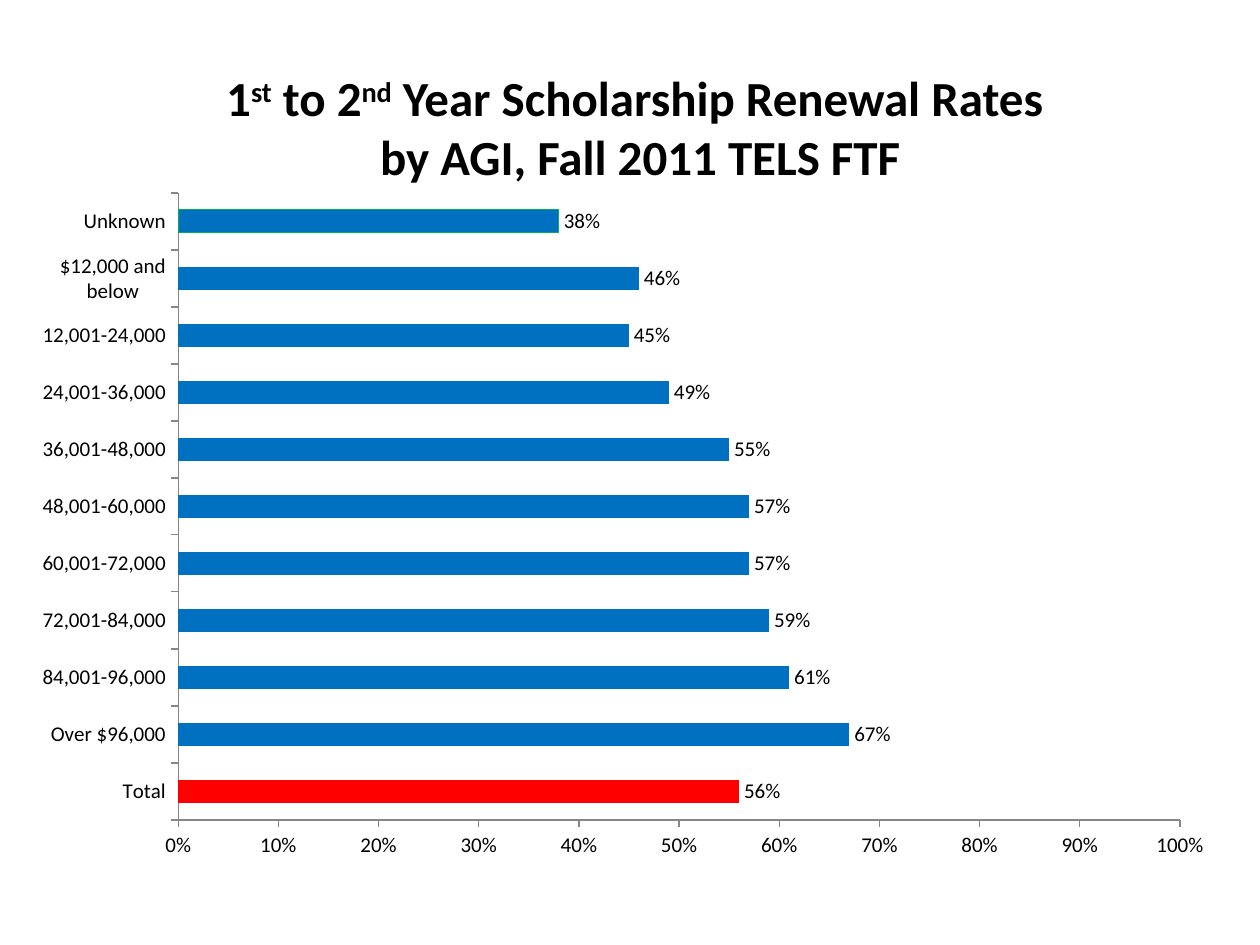
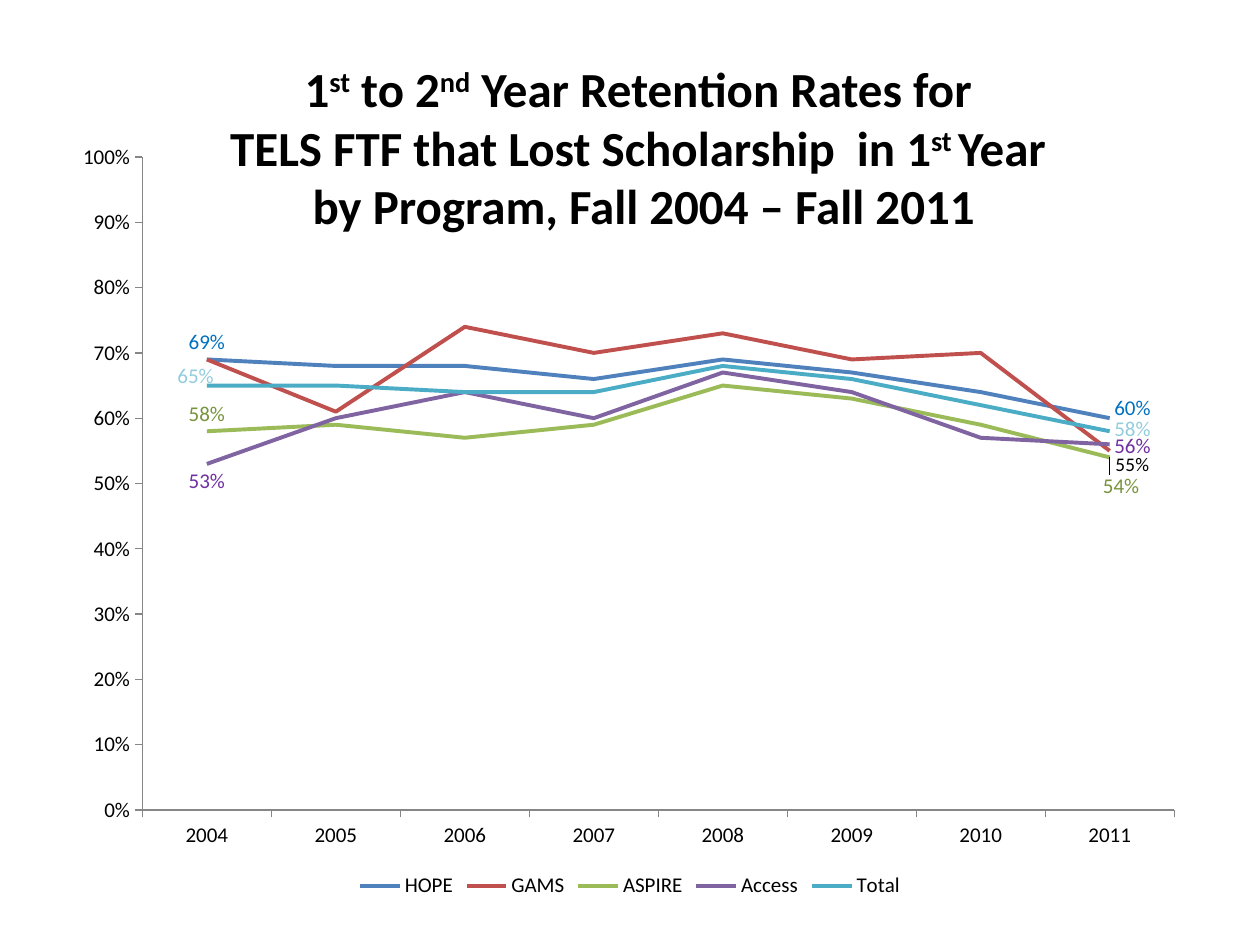
"""Build two slides on scholarship renewal and retention rates."""
from lxml.etree import SubElement
from pptx import Presentation
from pptx.chart.data import CategoryChartData
from pptx.dml.color import RGBColor
from pptx.enum.chart import XL_CHART_TYPE, XL_LABEL_POSITION, XL_LEGEND_POSITION, XL_TICK_MARK
from pptx.enum.text import MSO_ANCHOR, PP_ALIGN
from pptx.oxml.ns import qn
from pptx.util import Cm, Pt

FONT = "Calibri"
COLORS = {
    "text": "000000", "axis": "868686", "bar": "0070C0", "total": "FF0000", "outline": "00B050",
    "HOPE": "4F81BD", "GAMS": "C0504D", "ASPIRE": "9BBB59", "Access": "8064A2", "Total": "4BACC6",
    "HOPE label": "0070C0", "GAMS label": "000000", "ASPIRE label": "77933C",
    "Access label": "7030A0", "Total label": "93CDDD",
}
ABOVE, BELOW = XL_LABEL_POSITION.ABOVE, XL_LABEL_POSITION.BELOW

# Every second part between bars is superscript.
RENEWAL_TITLE = ["1|st| to 2|nd| Year Scholarship Renewal Rates ", "by AGI, Fall 2011 TELS FTF"]
RETENTION_TITLE = [
    "1|st| to 2|nd| Year Retention Rates for ",
    "TELS FTF that Lost Scholarship  in 1|st |Year ",
    "by Program, Fall 2004 – Fall 2011",
]
RENEWAL_RATES = {
    "Total": 0.56, "Over $96,000": 0.67, "84,001-96,000": 0.61, "72,001-84,000": 0.59,
    "60,001-72,000": 0.57, "48,001-60,000": 0.57, "36,001-48,000": 0.55, "24,001-36,000": 0.49,
    "12,001-24,000": 0.45, "$12,000 and below": 0.46, "Unknown": 0.38,
}
YEARS = [str(year) for year in range(2004, 2012)]
RETENTION_RATES = {
    "HOPE": [0.69, 0.68, 0.68, 0.66, 0.69, 0.67, 0.64, 0.60],
    "GAMS": [0.69, 0.61, 0.74, 0.70, 0.73, 0.69, 0.70, 0.55],
    "ASPIRE": [0.58, 0.59, 0.57, 0.59, 0.65, 0.63, 0.59, 0.54],
    "Access": [0.53, 0.60, 0.64, 0.60, 0.67, 0.64, 0.57, 0.56],
    "Total": [0.65, 0.65, 0.64, 0.64, 0.68, 0.66, 0.62, 0.58],
}
LABELS = {
    "HOPE": (ABOVE, 12, {0: (0, 0), 7: (0.02, 0.01)}),
    "GAMS": (ABOVE, 11, {7: (0.02, 0.04)}),
    "ASPIRE": (ABOVE, 12, {0: (0, 0), 7: (0.01, 0.06)}),
    "Access": (BELOW, 12, {0: (0, 0), 7: (0.02, -0.02)}),
    "Total": (ABOVE, 12, {0: (-0.01, 0.01), 7: (0.02, 0.02)}),
}


def color(name):
    return RGBColor.from_string(COLORS[name])


def style_font(font, size, color_name="text", bold=False):
    font.name, font.size, font.bold = FONT, Pt(size), bold
    font.color.rgb = color(color_name)


def add_title(slide, left, top, lines):
    frame = slide.shapes.add_textbox(Cm(left), Cm(top), Cm(21.59), Cm(2.97)).text_frame
    frame.word_wrap = True
    frame.vertical_anchor = MSO_ANCHOR.MIDDLE
    for number, line in enumerate(lines):
        paragraph = frame.add_paragraph() if number else frame.paragraphs[0]
        paragraph.alignment = PP_ALIGN.CENTER
        for position, text in enumerate(line.split("|")):
            run = paragraph.add_run()
            run.text = text
            style_font(run.font, 28, bold=True)
            if position % 2:
                run.font._element.set("baseline", "30000")


def add_layout(parent, index, **values):
    layout = SubElement(parent, qn("c:layout"))
    parent.insert(index, layout)
    manual = SubElement(layout, qn("c:manualLayout"))
    for tag, value in values.items():
        SubElement(manual, qn(f"c:{tag}")).set("val", str(value))


def add_rate_chart(slide, kind, box, plot_box, categories, series_values):
    data = CategoryChartData(number_format="0%")
    data.categories = categories
    for name, values in series_values.items():
        data.add_series(name, values)
    chart = slide.shapes.add_chart(kind, *map(Cm, box), data).chart
    style_font(chart.font, 10)
    chart.has_title = False
    chart.has_legend = False
    for axis in (chart.category_axis, chart.value_axis):
        axis.has_major_gridlines = False
        axis.major_tick_mark = XL_TICK_MARK.OUTSIDE
        axis.minor_tick_mark = XL_TICK_MARK.NONE
        axis.format.line.color.rgb = color("axis")
        style_font(axis.tick_labels.font, 12)
    axis = chart.value_axis
    axis.minimum_scale, axis.maximum_scale, axis.major_unit = 0, 1, 0.1
    axis.tick_labels.number_format = "0%"
    axis.tick_labels.number_format_is_linked = False
    plot_area = chart._chartSpace.chart.plotArea
    for layout in plot_area.findall(qn("c:layout")):
        plot_area.remove(layout)
    x, y, w, h = plot_box
    add_layout(plot_area, 0, layoutTarget="inner", xMode="edge", yMode="edge", x=x, y=y, w=w, h=h)
    chart.plots[0].vary_by_categories = False
    return chart


def build_renewal_slide(slide):
    chart = add_rate_chart(slide, XL_CHART_TYPE.BAR_CLUSTERED, (0.43, 3.61, 24.33, 13.97),
                           (0.13, 0.02, 0.83, 0.905), list(RENEWAL_RATES),
                           {"Series 1": list(RENEWAL_RATES.values())})
    chart.plots[0].gap_width = 150
    series = chart.plots[0].series[0]
    for target, name in ((series, "bar"), (series.points[0], "total"), (series.points[10], "bar")):
        target.format.fill.solid()
        target.format.fill.fore_color.rgb = color(name)
    series.points[10].format.line.color.rgb = color("outline")
    labels = series.data_labels
    labels.show_value = True
    labels.position = XL_LABEL_POSITION.OUTSIDE_END
    labels.number_format, labels.number_format_is_linked = "0%", False
    style_font(labels.font, 12)
    add_title(slide, 2.11, 1.07, RENEWAL_TITLE)


def build_retention_slide(slide):
    chart = add_rate_chart(slide, XL_CHART_TYPE.LINE, (1.27, 2.54, 22.86, 15.67),
                           (0.07, 0.04, 0.91, 0.84), YEARS, RETENTION_RATES)
    chart.has_legend = True
    chart.legend.position = XL_LEGEND_POSITION.BOTTOM
    chart.legend.include_in_layout = False
    style_font(chart.legend.font, 12)
    for series in chart.plots[0].series:
        series.smooth = False
        series.format.line.width = Pt(2.25)
        series.format.line.color.rgb = color(series.name)
        series.data_labels.show_value = False
        position, size, offsets = LABELS[series.name]
        for index, (x, y) in offsets.items():
            label = series.points[index].data_label
            style_font(label.font, size, f"{series.name} label")
            label.position = position
            if x or y:
                element = series.data_labels._element.xpath(f'c:dLbl[c:idx/@val="{index}"]')[0]
                add_layout(element, 1, x=x, y=y)
    add_title(slide, 2.18, 1.47, RETENTION_TITLE)


def main():
    presentation = Presentation()
    presentation.slide_width, presentation.slide_height = Cm(25.4), Cm(19.05)
    for build in (build_renewal_slide, build_retention_slide):
        build(presentation.slides.add_slide(presentation.slide_layouts[6]))
    presentation.save("out.pptx")


if __name__ == "__main__":
    main()
